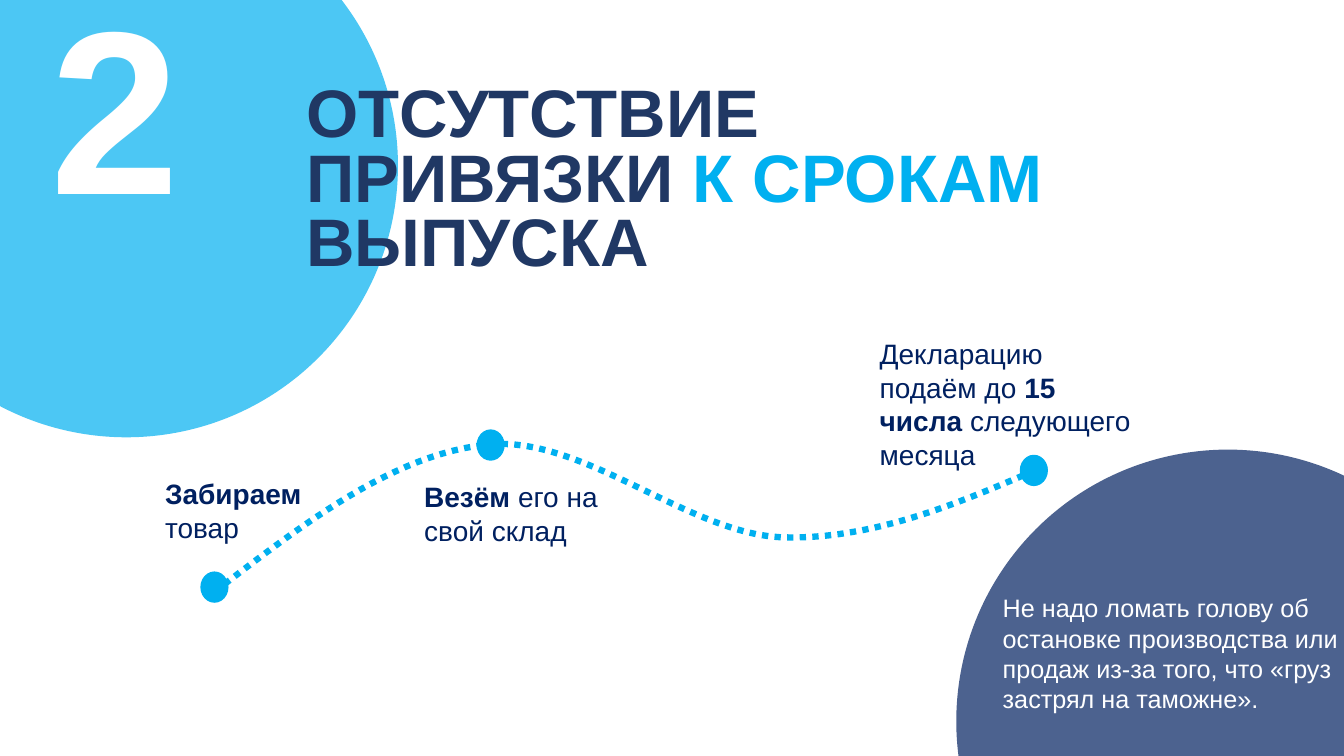
from pptx import Presentation, util as u
from pptx.dml.color import RGBColor
from pptx.enum import dml, shapes, text
from pptx.oxml.ns import qn
from lxml import etree

SKY = RGBColor(0x00, 0xB0, 0xF0)
NAVY = RGBColor(0x00, 0x20, 0x60)
TITLE = RGBColor(0x20, 0x38, 0x64)
WHITE = RGBColor(0xFF, 0xFF, 0xFF)


class Deck:
    font = "Arial"

    def __init__(self, width, height):
        self.prs = Presentation()
        self.prs.slide_width, self.prs.slide_height = u.Cm(width), u.Cm(height)
        self.s = self.prs.slides.add_slide(self.prs.slide_layouts[6])

    def ellipse(self, x, y, w, h, color, opacity=100):
        sp = self.s.shapes.add_shape(
            shapes.MSO_SHAPE.OVAL, u.Cm(x), u.Cm(y), u.Cm(w), u.Cm(h))
        sp.shadow.inherit = False
        sp.fill.solid()
        sp.fill.fore_color.rgb = color
        sp.line.fill.background()
        if opacity < 100:
            clr = sp.fill._xPr.find(qn("a:solidFill"))[0]
            etree.SubElement(clr, qn("a:alpha"), val=str(opacity * 1000))

    def text(self, x, y, w, h, runs, size, color, spacing=None):
        sp = self.s.shapes.add_textbox(u.Cm(x), u.Cm(y), u.Cm(w), u.Cm(h))
        tf = sp.text_frame
        tf.word_wrap = True
        tf.auto_size = text.MSO_AUTO_SIZE.SHAPE_TO_FIT_TEXT
        p = tf.paragraphs[0]
        if spacing:
            p.line_spacing = u.Pt(spacing)
            p.space_after = u.Pt(8)
        p.font.name = self.font
        p.font.size = u.Pt(size)
        p.font.color.rgb = color
        for words, bold, *accent in runs:
            r = p.add_run()
            r.text = words
            r.font.bold = bold
            if accent:
                r.font.color.rgb = accent[0]

    def curve(self, start, segments, color, width, steps=24):
        points = []
        a = start
        for b, c, d in segments:
            for i in range(1, steps + 1):
                t = i / steps
                k = 1 - t
                points.append(tuple(
                    u.Cm(k**3 * a[n] + 3 * k * k * t * b[n]
                         + 3 * k * t * t * c[n] + t**3 * d[n])
                    for n in (0, 1)))
            a = d
        builder = self.s.shapes.build_freeform(u.Cm(start[0]), u.Cm(start[1]))
        builder.add_line_segments(points, close=False)
        sp = builder.convert_to_shape()
        sp.shadow.inherit = False
        sp.fill.background()
        sp.line.color.rgb = color
        sp.line.width = u.Pt(width)
        sp.line.dash_style = dml.MSO_LINE.ROUND_DOT


def main():
    deck = Deck(33.87, 19.05)
    deck.ellipse(-3.66, -2.67, 13.69, 13.69, SKY, 70)
    deck.text(1.02, 3.86, 5.77, 3.18, [("2", True)], 166, WHITE, 59)

    steps = [
        (3.91, 11.89, 5.23, 1.96, [("Забираем", True), (" товар", False)]),
        (10.44, 11.96, 5.84, 1.96,
         [("Везём", True), (" его на свой склад", False)]),
        (21.92, 8.36, 7.09, 2.82,
         [("Декларацию подаём до ", False), ("15 числа ", True),
          ("следующего месяца", False)]),
    ]
    for x, y, w, h, runs in steps:
        deck.text(x, y, w, h, runs, 20, NAVY)

    deck.curve((5.41, 14.91), [
        ((7.67, 13.18), (9.93, 11.43), (12.32, 11.2)),
        ((14.68, 10.97), (17.35, 13.44), (19.69, 13.54)),
        ((22.05, 13.61), (24.23, 12.65), (26.42, 11.71)),
    ], SKY, 4.5)
    for x, y in ((5.05, 14.4), (25.7, 11.46), (12.01, 10.82)):
        deck.ellipse(x, y, 0.71, 0.79, SKY)

    deck.text(7.47, 2.06, 21.46, 5.18, [
        ("ОТСУТСТВИЕ ПРИВЯЗКИ ", True),
        ("К СРОКАМ ", True, SKY),
        ("ВЫПУСКА", True),
    ], 48, TITLE, 46)

    deck.ellipse(24.1, 11.33, 13.69, 13.69, NAVY, 70)
    deck.text(25.02, 14.81, 9.35, 3.33, [
        ("Не надо ломать голову об остановке производства или продаж "
         "из-за того, что «груз застрял на таможне».", False),
    ], 18, WHITE)
    deck.prs.save("out.pptx")


if __name__ == "__main__":
    main()
